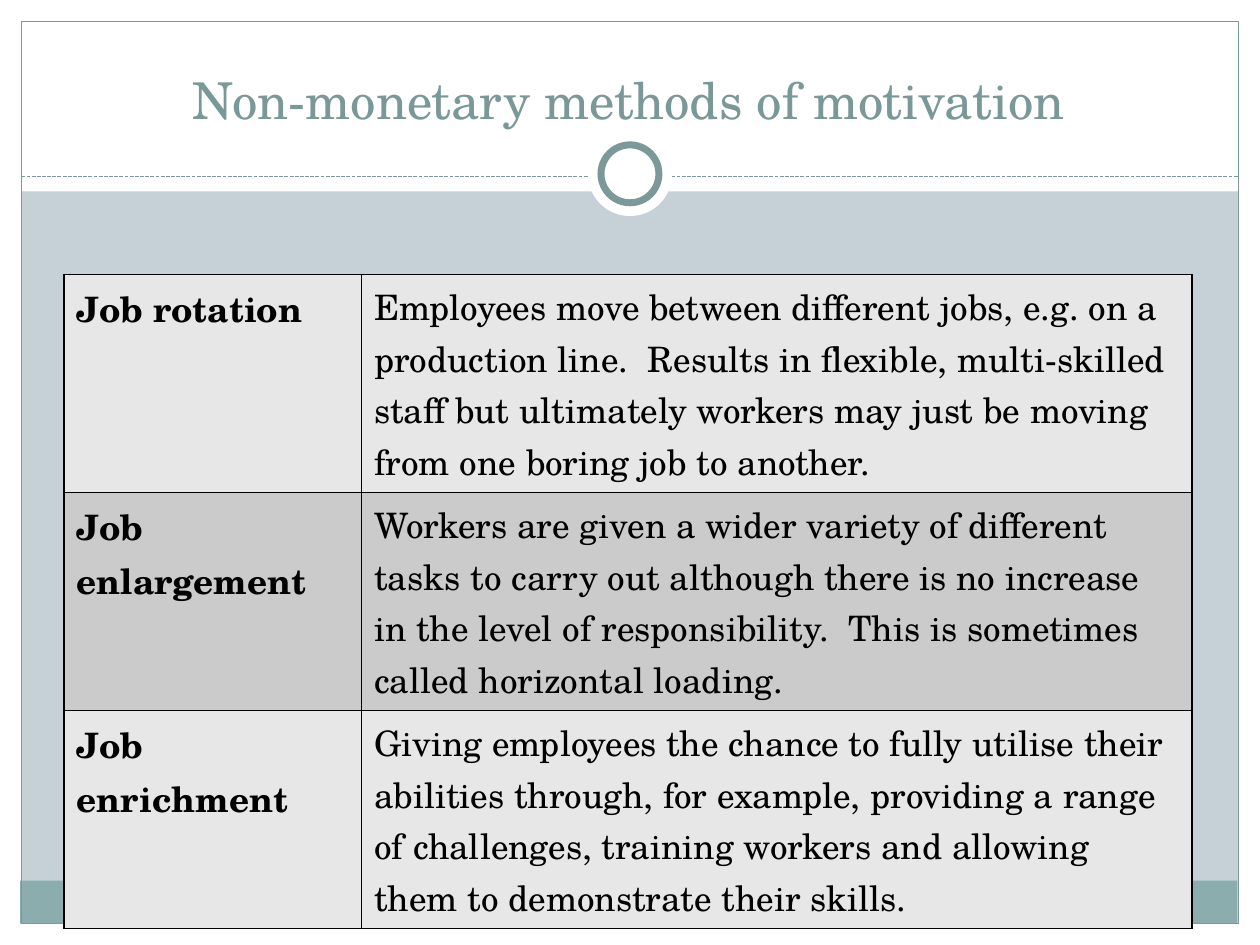
from lxml import etree
from pptx import Presentation
from pptx.dml.color import RGBColor
from pptx.enum.dml import MSO_LINE
from pptx.enum.shapes import MSO_CONNECTOR, MSO_SHAPE
from pptx.enum.text import MSO_ANCHOR, PP_ALIGN
from pptx.oxml.ns import qn
from pptx.util import Inches, Pt

RECT, OVAL = MSO_SHAPE.RECTANGLE, MSO_SHAPE.OVAL
STRAIGHT = MSO_CONNECTOR.STRAIGHT
DASH = MSO_LINE.SQUARE_DOT
BOTTOM, CENTER = MSO_ANCHOR.BOTTOM, PP_ALIGN.CENTER

WHITE = RGBColor(0xFF, 0xFF, 0xFF)
BLACK = RGBColor(0, 0, 0)
MIST = RGBColor(0xC5, 0xD1, 0xD7)
TEAL = RGBColor(0x8C, 0xAD, 0xAE)
SAGE = RGBColor(0x7C, 0x99, 0x9A)
HEAD = RGBColor(0x7B, 0x98, 0x99)
LIGHT = RGBColor(0xE7, 0xE7, 0xE7)
DARK = RGBColor(0xCB, 0xCB, 0xCB)
FACE = "TeX Gyre Schola"

TITLE = "Non-monetary methods of motivation"
ROWS = [
    ("Job rotation",
     "Employees move between different jobs, e.g. on a production line.  "
     "Results in flexible, multi-skilled staff but ultimately workers may "
     "just be moving from one boring job to another."),
    ("Job enlargement",
     "Workers are given a wider variety of different tasks to carry out "
     "although there is no increase in the level of responsibility.  This "
     "is sometimes called horizontal loading."),
    ("Job enrichment",
     "Giving employees the chance to fully utilise their abilities through, "
     "for example, providing a range of challenges, training workers and "
     "allowing them to demonstrate their skills."),
]
COLS, HIGH = (2.36, 6.59), 1.73
WIDE, TALL, EDGE, RULE = 10, 7.5, 0.17, 1.4

BANDS = [
    (0, TALL - EDGE, WIDE, EDGE, WHITE),
    (0, 0, WIDE, 1.52, WHITE),
    (0, 0, EDGE, TALL, WHITE),
    (WIDE - EDGE, 0, EDGE, TALL, WHITE),
    (0.16, 6.99, 9.66, 0.34, TEAL),
]

prs = Presentation()
prs.slide_width, prs.slide_height = Inches(WIDE), Inches(TALL)
slide = prs.slides.add_slide(prs.slide_layouts[6])
slide.background.fill.solid()
slide.background.fill.fore_color.rgb = MIST
shapes = slide.shapes


def draw(kind, box, fill=None, line=None, width=0.75):
    shape = shapes.add_shape(kind, *map(Inches, box))
    shape.shadow.inherit = False
    for part, color in ((shape.fill, fill), (shape.line.fill, line)):
        if color is None:
            part.background()
        else:
            part.solid()
            part.fore_color.rgb = color
    if line is not None:
        shape.line.width = Pt(width)


def style(para, size, color, bold=False):
    font = para.font
    font.color.rgb = color
    look = {"name": FACE, "size": Pt(size), "bold": bold}
    for key, value in look.items():
        setattr(font, key, value)


def border(cell):
    props = cell._tc.get_or_add_tcPr()
    for spot, side in enumerate(("lnL", "lnR", "lnT", "lnB")):
        line = etree.Element(qn(f"a:{side}"), w=str(Pt(1)))
        fill = etree.SubElement(line, qn("a:solidFill"))
        etree.SubElement(fill, qn("a:srgbClr"), val=str(BLACK))
        props.insert(spot, line)


for *box, color in BANDS:
    draw(RECT, box, color)
draw(RECT, (EDGE, EDGE, WIDE - 2 * EDGE, TALL - 2 * EDGE), line=SAGE)

rule = shapes.add_connector(
    STRAIGHT, *map(Inches, (EDGE, RULE, WIDE - EDGE, RULE)))
rule.line.color.rgb = SAGE
rule.line.width = Pt(0.75)
rule.line.dash_style = DASH
etree.SubElement(rule._element.spPr, qn("a:effectLst"))

for size, line in ((0.67, None), (0.46, SAGE)):
    box = (WIDE / 2 - size / 2, 1.38 - size / 2, size, size)
    draw(OVAL, box, WHITE, line, 4)

frame = shapes.add_textbox(*map(Inches, (0.33, 0.25, 9.33, 0.83))).text_frame
frame.word_wrap = True
frame.vertical_anchor = BOTTOM
frame.text = TITLE
frame.paragraphs[0].alignment = CENTER
style(frame.paragraphs[0], 29, HEAD)

place = (0.51, 2.18, sum(COLS), HIGH * len(ROWS))
table = shapes.add_table(len(ROWS), len(COLS), *map(Inches, place)).table
for col, width in zip(table.columns, COLS):
    col.width = Inches(width)
for r, texts in enumerate(ROWS):
    table.rows[r].height = Inches(HIGH)
    for c, text in enumerate(texts):
        cell = table.cell(r, c)
        cell.text = text
        cell.fill.solid()
        cell.fill.fore_color.rgb = DARK if r % 2 else LIGHT
        style(cell.text_frame.paragraphs[0], 20, BLACK, c == 0)
        border(cell)

prs.save("out.pptx")
